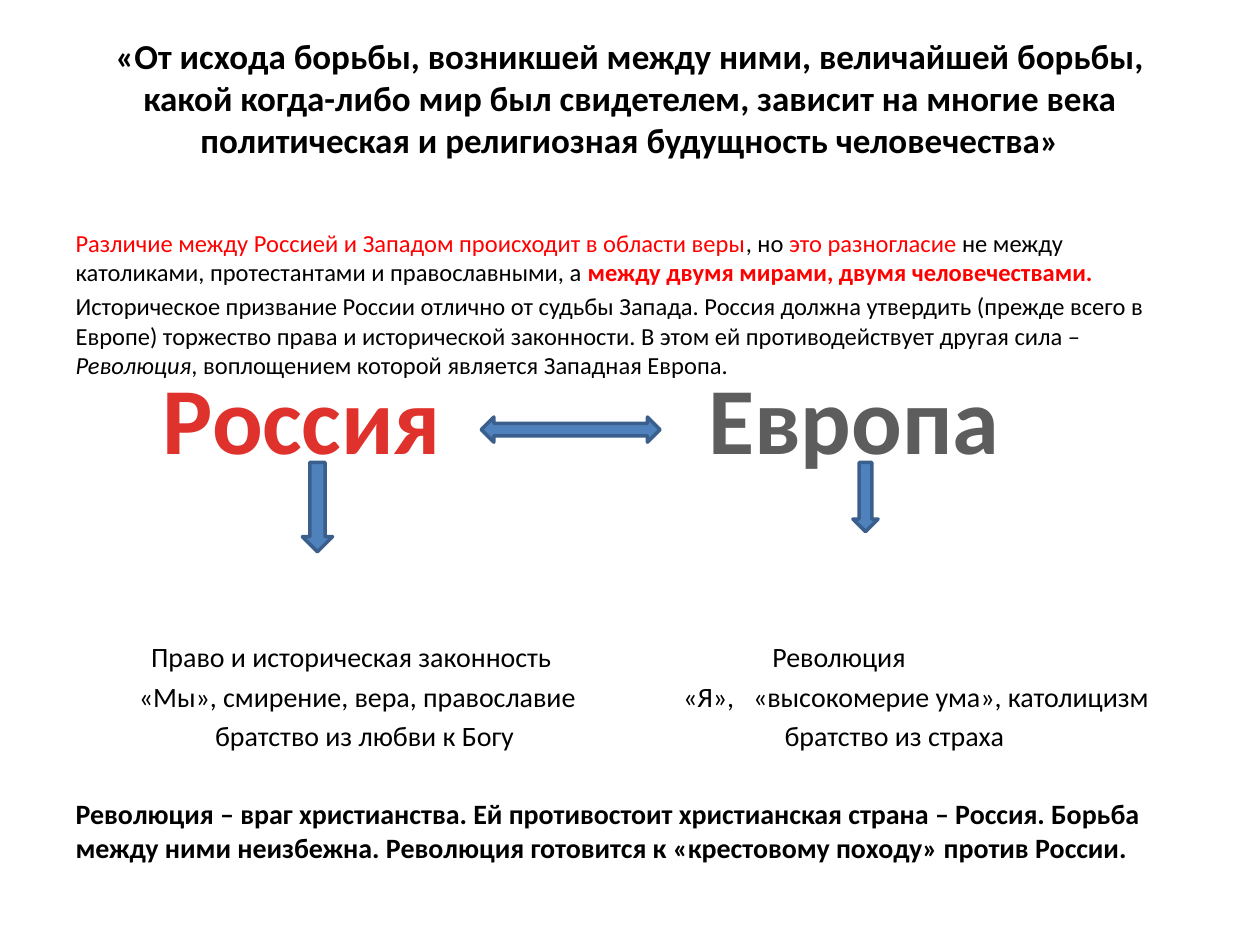
from pptx import Presentation
from pptx.dml.color import RGBColor
from pptx.enum.shapes import MSO_SHAPE
from pptx.enum.text import PP_ALIGN
from pptx.oxml import parse_xml
from pptx.oxml.ns import nsdecls
from pptx.util import Pt

# Content: a paragraph is a list of (text, colour, style) spans
BLACK, RED = "000000", "FF0000"
TITLE = [[("«От исхода борьбы, возникшей между ними, величайшей борьбы, какой когда-либо мир "
           "был свидетелем, зависит на многие века политическая и религиозная будущность "
           "человечества»", BLACK, "")]]
INTRO = [
    [("Различие между Россией и Западом происходит в области веры", RED, ""),
     (", но ", BLACK, ""),
     ("это разногласие ", RED, ""),
     ("не между католиками, протестантами и православными, а ", BLACK, ""),
     ("между двумя мирами, двумя человечествами.", RED, "bold")],
    [("Историческое призвание России отлично от судьбы Запада. Россия должна утвердить "
      "(прежде всего в Европе) торжество права и исторической законности. В этом ей "
      "противодействует другая сила – ", BLACK, ""),
     ("Революция", BLACK, "italic"),
     (", воплощением которой является Западная Европа.", BLACK, "")],
]
CONCLUSION = [[("Революция – враг христианства. Ей противостоит христианская страна – Россия. "
                "Борьба между ними неизбежна. Революция готовится к «крестовому походу» против "
                "России.", BLACK, "")]]
# Word, colour, left, width
SIDES = [("Россия", "E0322D", 70.5, 204), ("Европа", "5D5D5D", 377.5, 221)]
# Column left, then (line, indent)
COLUMNS = [
    (79.4, [("Право и историческая законность", 7),
            ("«Мы», смирение, вера, православие", 0),
            ("братство из любви к Богу", 43.5)]),
    (390.3, [("Революция", 51),
             ("«Я»,\t«высокомерие ума», католицизм", 0),
             ("братство из страха", 58)]),
]
TAB_STOP = 40
# Shape, left, top, width, height
ARROWS = [
    (MSO_SHAPE.LEFT_RIGHT_ARROW, 275, 238.3, 102.2, 14.4),
    (MSO_SHAPE.DOWN_ARROW, 172.8, 264.2, 17.3, 51.1),
    (MSO_SHAPE.DOWN_ARROW, 487.4, 264.2, 14.4, 39.6),
]
TEXT_LEFT, TEXT_WIDTH = 43.2, 633.6


def color(value):
    return RGBColor.from_string(value)


def add_text(page, paragraphs, left, top, width, height, size,
             bold=False, align=PP_ALIGN.LEFT):
    box = page.shapes.add_textbox(Pt(left), Pt(top), Pt(width), Pt(height))
    frame = box.text_frame
    frame.word_wrap = True
    frame.margin_left = frame.margin_right = frame.margin_top = frame.margin_bottom = 0
    for index, spans in enumerate(paragraphs):
        para = frame.paragraphs[0] if index == 0 else frame.add_paragraph()
        para.alignment = align
        para.space_after = Pt(size * 0.2)
        para.font.name, para.font.size, para.font.bold = "Calibri", Pt(size), bold
        for text, hue, style in spans:
            span = para.add_run()
            span.text = text
            span.font.color.rgb = color(hue)
            if style == "bold":
                span.font.bold = True
            elif style == "italic":
                span.font.italic = True
    return frame


deck = Presentation()
deck.slide_width, deck.slide_height = Pt(720), Pt(540)
page = deck.slides.add_slide(deck.slide_layouts[6])

# Title and introduction
add_text(page, TITLE, TEXT_LEFT, 19.8, TEXT_WIDTH, 74, 20, True, PP_ALIGN.CENTER)
add_text(page, INTRO, TEXT_LEFT, 130, TEXT_WIDTH, 90, 14)

# Two opposing sides
for word, hue, left, width in SIDES:
    add_text(page, [[(word, hue, "")]], left, 206, width, 66, 54, True, PP_ALIGN.CENTER)

# Arrows
for kind, *place in ARROWS:
    arrow = page.shapes.add_shape(kind, *map(Pt, place))
    arrow.shadow.inherit = False
    arrow.fill.solid()
    arrow.fill.fore_color.rgb = color("4F81BD")
    arrow.line.color.rgb = color("3A5F8C")
    arrow.line.width = Pt(2)

# Qualities of each side
for left, lines in COLUMNS:
    frame = add_text(page, [[(text, BLACK, "")] for text, _ in lines],
                     left, 365.7, 290, 68, 16)
    for para, (text, indent) in zip(frame.paragraphs, lines):
        properties = para._p.get_or_add_pPr()
        properties.set("marL", str(Pt(indent)))
        if "\t" in text:
            tabs = parse_xml(f'<a:tabLst {nsdecls("a")}>'
                             f'<a:tab pos="{Pt(TAB_STOP)}" algn="l"/></a:tabLst>')
            properties[-1].addprevious(tabs)

# Conclusion
add_text(page, CONCLUSION, TEXT_LEFT, 455.3, TEXT_WIDTH, 40, 16, True)

deck.save("out.pptx")
